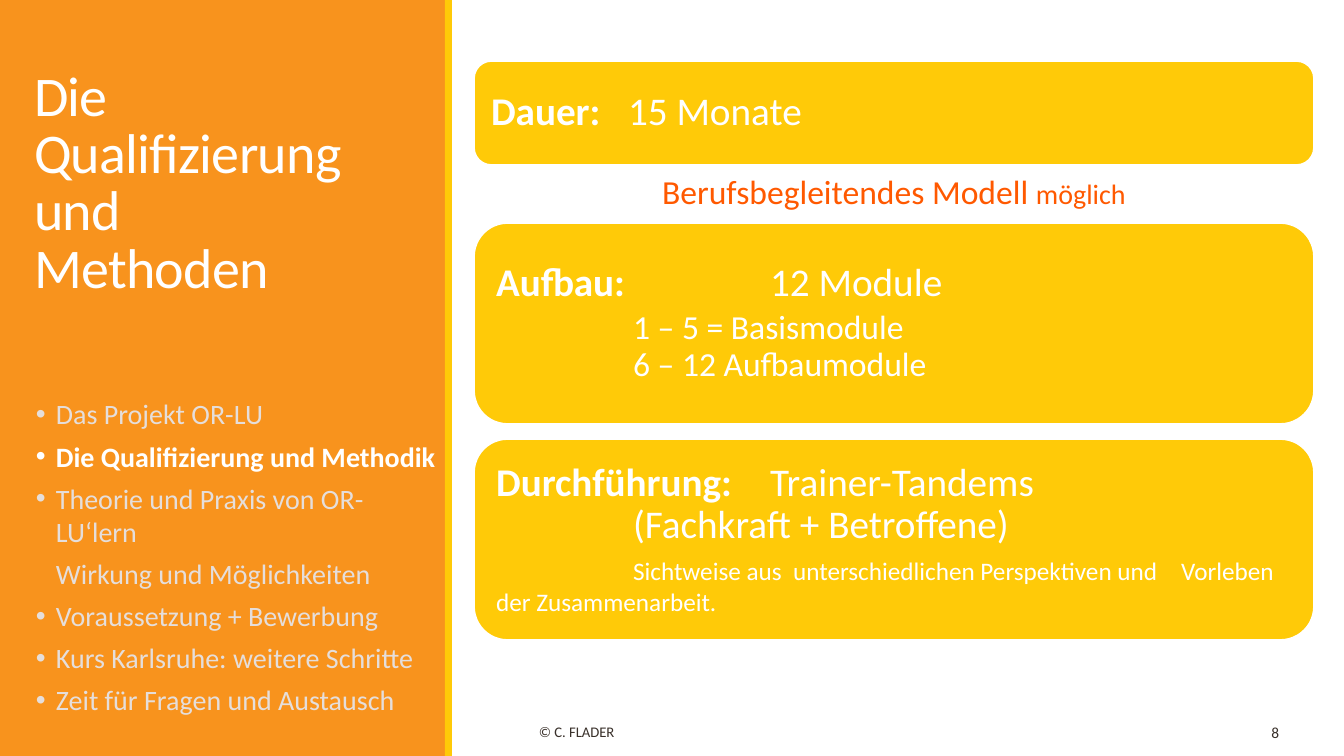
from lxml import etree
from pptx import Presentation, util as u
from pptx.dml.color import RGBColor
from pptx.enum import shapes, text
from pptx.oxml.ns import qn

ORANGE, YELLOW, WHITE = "F8931D", "FFCA08", "FFFFFF"
MUTED, DARK, ACCENT = "E5DEDB", "39302A", "FF5900"

TITLE = "Die Qualifizierung\nund \nMethoden"
AGENDA = [  # text, has bullet, is current
    ("Das Projekt OR-LU", True, False),
    ("Die Qualifizierung und Methodik", True, True),
    ("Theorie und Praxis von OR-LU‘lern", True, False),
    ("Wirkung und Möglichkeiten", False, False),
    ("Voraussetzung + Bewerbung", True, False),
    ("Kurs Karlsruhe: weitere Schritte", True, False),
    ("Zeit für Fragen und Austausch", True, False),
]
CARDS = [  # top, height, inset, label, main text, detail, detail size
    (61, 104, 17, "Dauer:", " \t15 Monate", "", 28),
    (223, 201, 22, "Aufbau:", " \t12 Module\n\t",
     "1 – 5 = Basismodule  \n\t6 – 12 Aufbaumodule", 24),
    (439, 201, 22, "Durchführung:", " \tTrainer-Tandems \n\t(Fachkraft + Betroffene)\n\t",
     "Sichtweise aus  unterschiedlichen Perspektiven und \tVorleben der Zusammenarbeit.", 18),
]
CARD_LEFT, CARD_WIDTH = 474, 840
TAB_STEP, TAB_COUNT = 137, 5
MODEL = [("Berufsbegleitendes Modell ", 24), ("möglich", 20)]
FOOTER, PAGE = "© C. FLADER", "8"


def px(n):
    return u.Emu(round(n * 914400 / 100.8))


def rgb(color):
    return RGBColor.from_string(color)


def add_text(p, content, size, color, bold=False, spacing=None):
    """Add runs to a paragraph, with a line break at each newline."""
    for i, line in enumerate(content.split("\n")):
        if i:
            p.add_line_break()
        if not line:
            continue
        r = p.add_run()
        r.text = line
        f = r.font
        f.name, f.size, f.bold = "Calibri", u.Pt(size), bold
        f.color.rgb = rgb(color)
        if spacing is not None:
            r._r.get_or_add_rPr().set("spc", str(spacing))


def add_box(s, x, y, w, h, anchor=text.MSO_ANCHOR.TOP):
    tf = s.shapes.add_textbox(px(x), px(y), px(w), px(h)).text_frame
    tf.word_wrap, tf.vertical_anchor = True, anchor
    return tf


def add_block(s, kind, x, y, w, h, fill, line=None):
    sp = s.shapes.add_shape(kind, px(x), px(y), px(w), px(h))
    sp.shadow.inherit = False
    sp.fill.solid()
    sp.fill.fore_color.rgb = rgb(fill)
    if line:
        sp.line.color.rgb, sp.line.width = rgb(line), u.Pt(1.25)
    else:
        sp.line.fill.background()
    return sp


def set_tabs(p):
    tabs = etree.SubElement(p._p.get_or_add_pPr(), qn("a:tabLst"))
    for i in range(1, TAB_COUNT + 1):
        etree.SubElement(tabs, qn("a:tab"), pos=str(px(i * TAB_STEP)), algn="l")


def set_bullet(p, bullet):
    pPr = p._p.get_or_add_pPr()
    pPr.set("marL", str(px(29)))
    pPr.set("indent", str(px(-20) if bullet else 0))
    if bullet:
        etree.SubElement(pPr, qn("a:buFont"), typeface="Arial")
        etree.SubElement(pPr, qn("a:buChar"), char="•")


def add_title(s):
    sp = s.shapes.title
    s.shapes._spTree.append(sp._element)  # in front of the side panel
    sp.left, sp.top, sp.width, sp.height = px(24), px(66), px(405), px(252)
    tf = sp.text_frame
    tf.word_wrap, tf.auto_size = True, text.MSO_AUTO_SIZE.NONE
    tf.vertical_anchor = text.MSO_ANCHOR.TOP
    p = tf.paragraphs[0]
    p.alignment, p.line_spacing = text.PP_ALIGN.LEFT, 0.85
    add_text(p, TITLE, 40, WHITE, spacing=-50)


def add_agenda(s):
    tf = add_box(s, 17, 392, 433, 298)
    for i, (item, bullet, current) in enumerate(AGENDA):
        p = tf.add_paragraph() if i else tf.paragraphs[0]
        p.space_before = u.Pt(6)
        set_bullet(p, bullet)
        add_text(p, item, 20, WHITE if current else MUTED, bold=current)


def add_card(s, top, height, inset, label, main, detail, detail_size):
    sp = add_block(s, shapes.MSO_SHAPE.ROUNDED_RECTANGLE,
                   CARD_LEFT, top, CARD_WIDTH, height, YELLOW, WHITE)
    tf = sp.text_frame
    tf.word_wrap, tf.vertical_anchor = True, text.MSO_ANCHOR.MIDDLE
    # the rounded corners already inset the text by 0.29 of their radius
    margin = px(inset - 0.29 * height / 6)
    tf.margin_left = tf.margin_right = tf.margin_top = tf.margin_bottom = margin
    p = tf.paragraphs[0]
    p.alignment, p.line_spacing = text.PP_ALIGN.LEFT, 0.9
    set_tabs(p)
    add_text(p, label, 28, WHITE, bold=True)
    add_text(p, main, 28, WHITE)
    add_text(p, detail, detail_size, WHITE)


def main():
    prs = Presentation()
    prs.slide_width, prs.slide_height = px(1344), px(756)
    s = prs.slides.add_slide(prs.slide_layouts[5])
    add_block(s, shapes.MSO_SHAPE.RECTANGLE, 0, 0, 446, 756, ORANGE)
    add_block(s, shapes.MSO_SHAPE.RECTANGLE, 445, 0, 7, 756, YELLOW)
    add_title(s)
    add_agenda(s)
    for card in CARDS:
        add_card(s, *card)

    p = add_box(s, CARD_LEFT, 166, CARD_WIDTH, 50).paragraphs[0]
    p.alignment = text.PP_ALIGN.CENTER
    for part, size in MODEL:
        add_text(p, part, size, ACCENT)

    middle = text.MSO_ANCHOR.MIDDLE
    add_text(add_box(s, 529, 712, 512, 40, middle).paragraphs[0], FOOTER, 10.5, DARK)
    p = add_box(s, 1155, 712, 134, 40, middle).paragraphs[0]
    p.alignment = text.PP_ALIGN.RIGHT
    add_text(p, PAGE, 11, DARK)
    prs.save("out.pptx")


if __name__ == "__main__":
    main()
